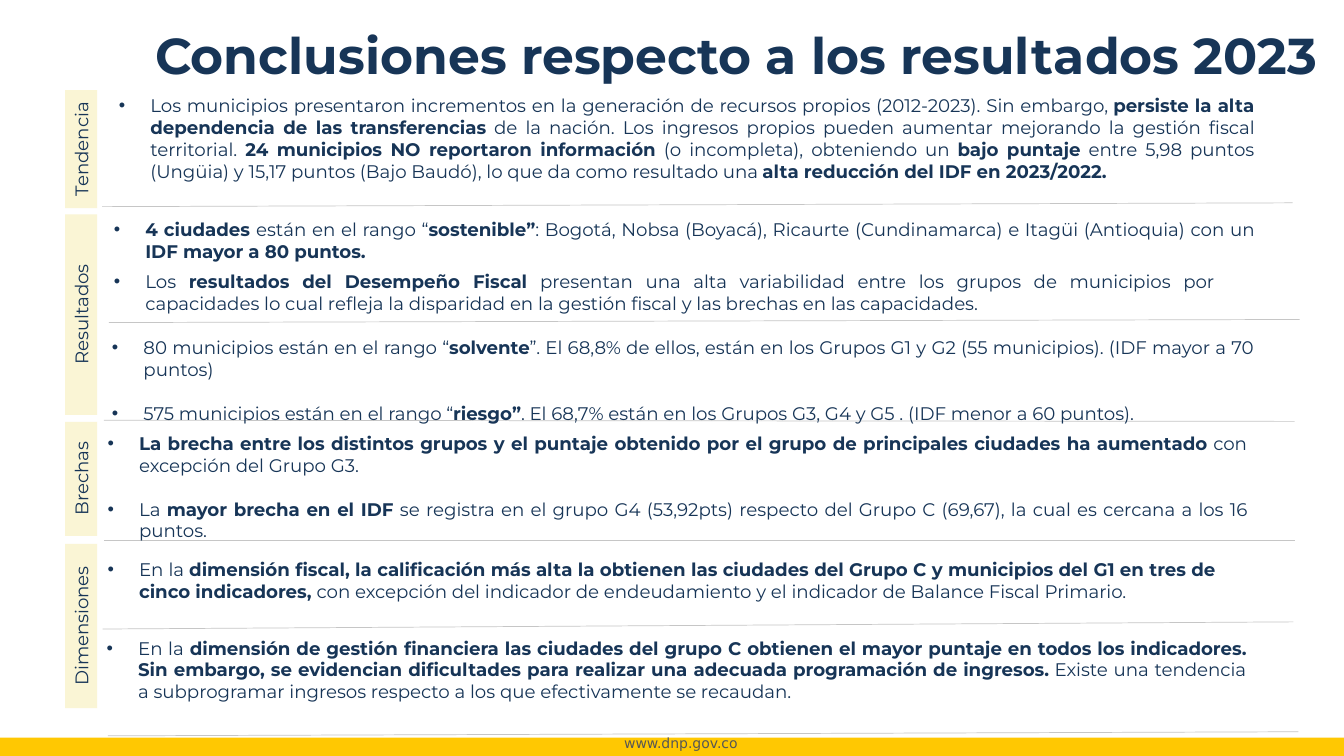
from lxml import etree
from pptx import Presentation
from pptx.dml.color import RGBColor
from pptx.enum import shapes, text
from pptx.oxml.ns import qn
from pptx.util import Pt

TITLE = "Conclusiones respecto a los resultados 2023"
SITE = "www.dnp.gov.co"

# **...** marks bold words; each entry is left, top, width, height, paragraphs
CONCLUSIONS = [
    (77.8, 64.1, 825.1, 70.6, [
        "Los municipios presentaron incrementos en la generación de recursos propios (2012-2023). "
        "Sin embargo, **persiste la alta dependencia de las transferencias** de la nación. Los "
        "ingresos propios pueden aumentar mejorando la gestión fiscal territorial. **24 municipios "
        "NO reportaron información **(o incompleta), obteniendo un **bajo puntaje** entre 5,98 "
        "puntos (Ungüia) y 15,17 puntos (Bajo Baudó), lo que da como resultado una **alta "
        "reducción del IDF en 2023/2022.**"]),
    (74.2, 152.6, 828.7, 38.9, [
        "**4 ciudades **están en el rango “**sostenible”**: Bogotá, Nobsa (Boyacá), Ricaurte "
        "(Cundinamarca) e Itagüi (Antioquia) con un **IDF mayor a 80 puntos.**"]),
    (74.2, 189.4, 799.9, 38.9, [
        "Los **resultados del Desempeño Fiscal **presentan una alta variabilidad entre los grupos "
        "de municipios por capacidades lo cual refleja la disparidad en la gestión fiscal y las "
        "brechas en las capacidades."]),
    (72.9, 237, 829.4, 70.6, [
        "80 municipios están en el rango “**solvente**”. El 68,8% de ellos, están en los Grupos "
        "G1 y G2 (55 municipios). (IDF mayor a 70 puntos)",
        "575 municipios están en el rango “**riesgo”**. El 68,7% están en los Grupos G3, G4 y "
        "G5 . (IDF menor a 60 puntos)."]),
    (69.8, 305, 828, 101.5, [
        "**La brecha entre los distintos grupos y el puntaje obtenido por el grupo de principales "
        "ciudades ha aumentado **con excepción del Grupo G3.",
        "La **mayor brecha en el IDF **se registra en el grupo G4 (53,92pts) respecto del Grupo C "
        "(69,67), la cual es cercana a los 16 puntos."]),
    (69.8, 395.3, 805, 38.9, [
        "En la **dimensión fiscal, la calificación más alta la obtienen las ciudades del Grupo C y "
        "municipios del G1 en tres de cinco indicadores, **con excepción del indicador de "
        "endeudamiento y el indicador de Balance Fiscal Primario."]),
    (69.1, 451.4, 828, 54.7, [
        "En la** dimensión de gestión financiera las ciudades del grupo C obtienen el mayor puntaje "
        "en todos los indicadores. Sin embargo, se evidencian dificultades para realizar una "
        "adecuada programación de ingresos. **Existe una tendencia a subprogramar ingresos "
        "respecto a los que efectivamente se recaudan."]),
]
SECTIONS = [("Tendencia", 64.4, 84.2), ("Resultados", 153, 143.3),
            ("Brechas", 301.3, 81.4), ("Dimensiones", 388.4, 117.4)]
RULES = [(72.9, 147.6, 144.9), (77.8, 230.4, 228.2), (74.2, 300.2, 301),
         (74.2, 385.9, 385.9), (73.4, 449.3, 444.2), (77, 525.6, 522.7)]

NAVY = RGBColor(0x17, 0x35, 0x57)
CREAM = RGBColor(0xFA, 0xF5, 0xD5)
YELLOW = RGBColor(0xFF, 0xC8, 0x02)
WHITE = RGBColor(0xFF, 0xFF, 0xFF)
GREY = RGBColor(0xC6, 0xC6, 0xC6)
SLATE = RGBColor(0x57, 0x57, 0x56)

FONT = "Montserrat"
BODY = 13
INDENT = 22.5
PARAGRAPH_GAP = 15.85
LABEL_CENTER, LABEL_THICK = 58, 23
RULE_WIDTH = 850.5

prs = Presentation()
prs.slide_width, prs.slide_height = Pt(960), Pt(540)
s = prs.slides.add_slide(prs.slide_layouts[6])


def style(r, size=BODY, color=NAVY, bold=False, name=FONT):
    r.font.name, r.font.size, r.font.bold = name, Pt(size), bold
    r.font.color.rgb = color


def add_box(x, y, w, h, fill):
    sp = s.shapes.add_shape(shapes.MSO_SHAPE.RECTANGLE, Pt(x), Pt(y), Pt(w), Pt(h))
    sp.shadow.inherit = False
    sp.fill.solid()
    sp.fill.fore_color.rgb = fill
    sp.line.fill.background()
    return sp


def add_textbox(x, y, w, h):
    tf = s.shapes.add_textbox(Pt(x), Pt(y), Pt(w), Pt(h)).text_frame
    tf.word_wrap = True
    return tf


def add_bullet(p):
    pPr = p._p.get_or_add_pPr()
    pPr.set("marL", str(Pt(INDENT)))
    pPr.set("indent", str(-Pt(INDENT)))
    etree.SubElement(pPr, qn("a:buFont")).set("typeface", "Arial")
    etree.SubElement(pPr, qn("a:buChar")).set("char", "•")


def add_conclusion(x, y, w, h, paragraphs):
    tf = add_textbox(x, y, w, h)
    for i, content in enumerate(paragraphs):
        p = tf.add_paragraph() if i else tf.paragraphs[0]
        p.alignment = text.PP_ALIGN.JUSTIFY
        if i:
            p.space_before = Pt(PARAGRAPH_GAP)
        add_bullet(p)
        for j, part in enumerate(content.split("**")):
            if part:
                r = p.add_run()
                r.text = part
                style(r, bold=j % 2 == 1)


def add_section(name, top, length):
    sp = add_box(LABEL_CENTER - length / 2, top + (length - LABEL_THICK) / 2,
                 length, LABEL_THICK, CREAM)
    sp.rotation = 270
    p = sp.text_frame.paragraphs[0]
    p.text = name
    p.alignment = text.PP_ALIGN.CENTER
    style(p.runs[0])


def add_rule(x, y1, y2):
    c = s.shapes.add_connector(shapes.MSO_CONNECTOR.STRAIGHT,
                               Pt(x), Pt(y1), Pt(x + RULE_WIDTH), Pt(y2))
    c.line.color.rgb = GREY
    c.line.width = Pt(0.5)
    etree.SubElement(c._element.spPr, qn("a:effectLst"))


add_box(0, 527, 960, 14.4, YELLOW)
p = add_textbox(410.4, 521.3, 151.9, 19.4).paragraphs[0]
p.text = SITE
p.alignment = text.PP_ALIGN.CENTER
style(p.runs[0], 10, SLATE, name="DejaVu Sans")

tf = add_box(103.7, 18, 846.7, 46.8, WHITE).text_frame
tf.vertical_anchor = text.MSO_ANCHOR.MIDDLE
p = tf.paragraphs[0]
p.text = TITLE
p.alignment = text.PP_ALIGN.LEFT
p.line_spacing = 0.9
style(p.runs[0], 36, bold=True)

for rule in RULES:
    add_rule(*rule)
for section in SECTIONS:
    add_section(*section)
for conclusion in CONCLUSIONS:
    add_conclusion(*conclusion)

prs.save("out.pptx")
